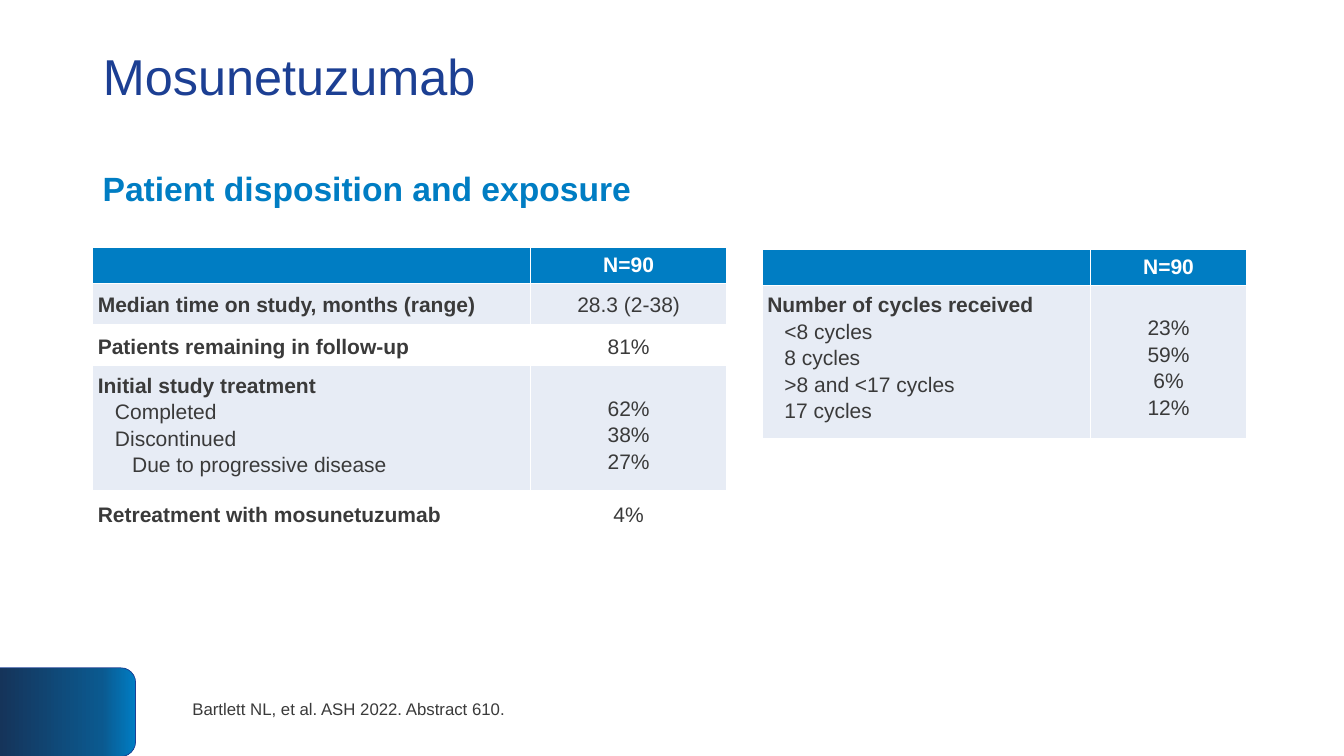
from copy import deepcopy

from lxml import etree
from pptx import Presentation
from pptx.dml.color import RGBColor
from pptx.enum.shapes import MSO_SHAPE
from pptx.enum.text import MSO_ANCHOR, MSO_AUTO_SIZE, PP_ALIGN
from pptx.oxml.ns import qn
from pptx.util import Inches, Pt

LEFT, CENTER = PP_ALIGN.LEFT, PP_ALIGN.CENTER
TOP, MIDDLE = MSO_ANCHOR.TOP, MSO_ANCHOR.MIDDLE
TAB_SHAPE = MSO_SHAPE.ROUND_2_SAME_RECTANGLE
NO_FIT = MSO_AUTO_SIZE.NONE

NAVY, BLUE, INK = "1C3F93", "007DC3", "3A3A3A"
WHITE, PALE = "FFFFFF", "E7ECF5"
INDENT = 0.17
FIRST_VALUE_TOP = 0.28  # puts the first value beside the second label line


def rgb(value):
    return RGBColor.from_string(value)


class SlideBuilder:
    font_name = "Arial"

    def __init__(self, page):
        self.page = page

    def add_words(self, para, text, color, size, bold=False, align=LEFT, spacing=1.0, level=0):
        if level:
            para._p.get_or_add_pPr().set("marL", str(Inches(INDENT * level)))
        for name, value in {"alignment": align, "line_spacing": spacing}.items():
            setattr(para, name, value)
        span = para.add_run()
        span.text = text
        look = {"name": self.font_name, "size": Pt(size), "bold": bold}
        for name, value in look.items():
            setattr(span.font, name, value)
        span.font.color.rgb = rgb(color)

    def place(self, box, left, top, width, height):
        area = {"left": left, "top": top, "width": width, "height": height}
        for name, value in area.items():
            setattr(box, name, Inches(value))

    def title(self, text, area):
        box = self.page.shapes.title
        self.place(box, *area)
        frame = box.text_frame
        frame.auto_size, frame.vertical_anchor = NO_FIT, MIDDLE
        self.add_words(frame.paragraphs[0], text, NAVY, 36, spacing=0.9)

    def text(self, text, area, color, size, **look):
        box = self.page.shapes.add_textbox(*map(Inches, area))
        box.text_frame.word_wrap = True
        self.add_words(box.text_frame.paragraphs[0], text, color, size, **look)

    def gradient_tab(self, area, stops):
        tab = self.page.shapes.add_shape(TAB_SHAPE, *map(Inches, area))
        tab.rotation = 90
        tab.shadow.inherit = False
        tab.line.color.rgb, tab.line.width = rgb(NAVY), Pt(0.5)
        tab.fill.gradient()
        tab.fill.gradient_angle = 270
        stop_list = tab._element.spPr.find(qn("a:gradFill")).find(qn("a:gsLst"))
        while len(stop_list) < len(stops):
            stop_list.append(deepcopy(stop_list[0]))
        for stop, (position, color) in zip(tab.fill.gradient_stops, stops):
            stop.position, stop.color.rgb = position, rgb(color)

    def borders(self, cell):
        props = cell._tc.get_or_add_tcPr()
        for place, side in enumerate(("lnL", "lnR", "lnT", "lnB")):
            line = etree.Element(qn("a:" + side), w=str(Pt(1)))
            fill = etree.SubElement(line, qn("a:solidFill"))
            etree.SubElement(fill, qn("a:srgbClr"), val=WHITE)
            props.insert(place, line)

    def cell(self, cell, lines, fill, margin, anchor, **look):
        """Each line is a (text, indent level, bold) triple."""
        cell.fill.solid()
        cell.fill.fore_color.rgb = rgb(fill)
        self.borders(cell)
        for side in ("left", "right", "top", "bottom"):
            setattr(cell, "margin_" + side, Inches(margin))
        cell.vertical_anchor = anchor
        frame = cell.text_frame
        for number, (text, level, bold) in enumerate(lines):
            para = frame.add_paragraph() if number else frame.paragraphs[0]
            self.add_words(para, text, size=15, level=level, bold=bold, **look)

    def table(self, left, top, widths, heights, rows):
        """Each row is (heading, [(sub-label, level)], values)."""
        area = (left, top, sum(widths), sum(heights))
        grid = self.page.shapes.add_table(len(heights), 2, *map(Inches, area)).table
        for column, width in zip(grid.columns, widths):
            column.width = Inches(width)
        for row, height in zip(grid.rows, heights):
            row.height = Inches(height)

        # Header row
        self.cell(grid.cell(0, 0), [], BLUE, 0, MIDDLE)
        self.cell(grid.cell(0, 1), [("N=90", 0, True)], BLUE, 0, MIDDLE,
                  color=WHITE, align=CENTER)

        # Body rows
        for number, (heading, details, values) in enumerate(rows, 1):
            fill = PALE if number % 2 else WHITE
            anchor = TOP if details else MIDDLE
            labels = [(heading, 0, True)] + [(text, level, False) for text, level in details]
            figures = [(value, 0, False) for value in values]
            for column, lines, align in ((0, labels, LEFT), (1, figures, CENTER)):
                self.cell(grid.cell(number, column), lines, fill, 0.05, anchor,
                          color=INK, align=align, spacing=1.14)
            if details:
                grid.cell(number, 1).margin_top = Inches(FIRST_VALUE_TOP)


def main():
    deck = Presentation()
    deck.slide_width, deck.slide_height = Inches(13.33), Inches(7.5)
    slide = SlideBuilder(deck.slides.add_slide(deck.slide_layouts[5]))

    # Corner tab
    slide.gradient_tab((0.23, 6.39, 0.88, 1.35),
                       [(0, BLUE), (0.25, "0B598F"), (1, "15345A")])

    # Headings and citation
    slide.title("Mosunetuzumab", (0.92, 0.06, 11.5, 1.45))
    slide.text("Patient disposition and exposure", (0.92, 1.66, 11.5, 0.57),
               BLUE, 24, bold=True, spacing=0.9)
    slide.text("Bartlett NL, et al. ASH 2022. Abstract 610.", (1.81, 6.88, 3.31, 0.3),
               INK, 12)

    # Disposition table
    slide.table(0.92, 2.45, (4.34, 1.95), (0.36, 0.41, 0.41, 1.23, 0.45), [
        ("Median time on study, months (range)", [], ["28.3 (2-38)"]),
        ("Patients remaining in follow-up", [], ["81%"]),
        ("Initial study treatment",
         [("Completed", 1), ("Discontinued", 1), ("Due to progressive disease", 2)],
         ["62%", "38%", "27%"]),
        ("Retreatment with mosunetuzumab", [], ["4%"]),
    ])

    # Exposure table
    slide.table(7.56, 2.47, (3.26, 1.54), (0.36, 1.51), [
        ("Number of cycles received",
         [("<8 cycles", 1), ("8 cycles", 1), (">8 and <17 cycles", 1), ("17 cycles", 1)],
         ["23%", "59%", "6%", "12%"]),
    ])

    deck.save("out.pptx")


if __name__ == "__main__":
    main()
